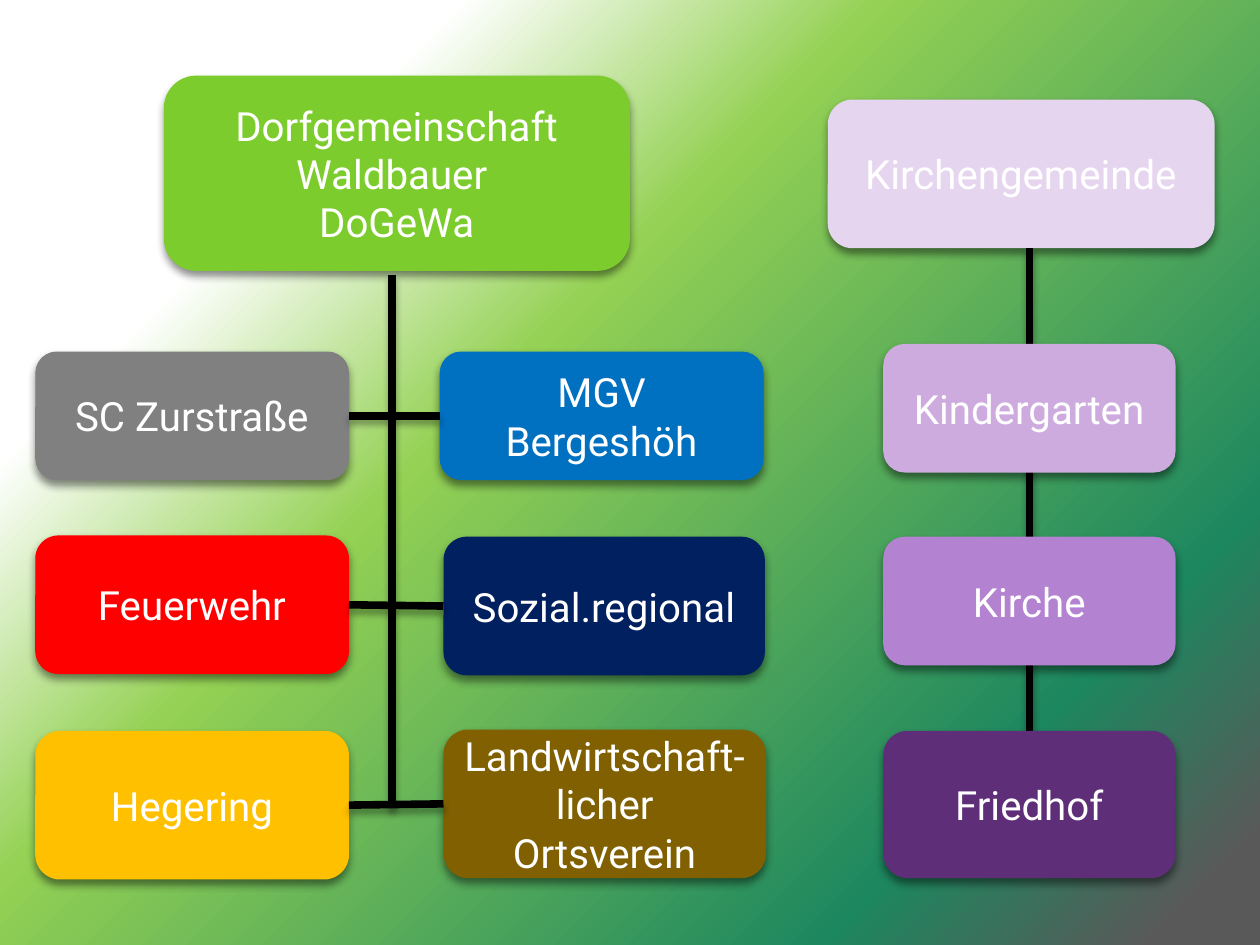
from lxml import etree
from pptx import Presentation
from pptx.dml.color import RGBColor
from pptx.enum.shapes import MSO_CONNECTOR, MSO_SHAPE
from pptx.enum.text import MSO_ANCHOR, PP_ALIGN
from pptx.oxml.ns import qn
from pptx.util import Inches, Pt

ROUNDED = MSO_SHAPE.ROUNDED_RECTANGLE
STRAIGHT = MSO_CONNECTOR.STRAIGHT
MIDDLE = MSO_ANCHOR.MIDDLE
CENTER = PP_ALIGN.CENTER
LEFT_SIDE, RIGHT_SIDE = 1, 3

THEME = {
    "font": "Roboto",
    "size": 23,
    "text": "FFFFFF",
    "line": "000000",
    "line_width": 4.33,
    "box_shadow": {"alpha": 45, "blur": 5, "distance": 3},
    "line_shadow": {"alpha": 35, "blur": 4, "distance": 3},
    "gradient": [(21, "FFFFFF", 0), (40, "94D154", 100),
                 (80, "1D875F", 100), (95, "595959", 100)],
    "gradient_angle": 45,
}

VILLAGE = (["Dorfgemeinschaft", "Waldbauer ", "DoGeWa"], "7DCC2E", (1.3, 0.6, 3.7, 1.55))
PARISH = (["Kirchengemeinde"], "E6D5EF", (6.57, 0.79, 3.07, 1.18))
CLUB_PAIRS = [
    ((["SC Zurstraße"], "808080", (0.28, 2.79, 2.49, 1.02)),
     (["MGV Bergeshöh"], "0070C0", (3.49, 2.79, 2.57, 1.02))),
    ((["Feuerwehr"], "FF0000", (0.28, 4.25, 2.49, 1.1)),
     (["Sozial.regional"], "002060", (3.52, 4.26, 2.55, 1.1))),
    ((["Hegering"], "FFC000", (0.28, 5.8, 2.49, 1.18)),
     (["Landwirtschaft-licher Ortsverein"], "806000", (3.52, 5.79, 2.56, 1.18))),
]
PARISH_UNITS = [
    (["Kindergarten"], "CDABDF", (7.01, 2.73, 2.32, 1.02)),
    (["Kirche"], "B382D0", (7.01, 4.26, 2.32, 1.02)),
    (["Friedhof"], "5E2E79", (7.01, 5.8, 2.32, 1.17)),
]
VILLAGE_TRUNK = (3.11, 2.18, 6.41)
PARISH_TRUNK = (8.17, 1.97, 6.2)


def add_color(parent, color, alpha):
    node = etree.SubElement(parent, qn("a:srgbClr"), val=color)
    if alpha < 100:
        etree.SubElement(node, qn("a:alpha"), val=str(alpha * 1000))


def add_shadow(item, alpha, blur, distance):
    properties = item._element.spPr
    for old in properties.findall(qn("a:effectLst")):
        properties.remove(old)
    effects = etree.SubElement(properties, qn("a:effectLst"))
    shadow = etree.SubElement(effects, qn("a:outerShdw"), blurRad=str(Pt(blur)),
                              dist=str(Pt(distance)), dir="5400000",
                              algn="ctr", rotWithShape="0")
    add_color(shadow, "000000", alpha)


def set_background(slide):
    fill = slide.background.fill
    fill.gradient()
    fill.gradient_angle = 0
    gradient = slide._element.cSld.find(".//" + qn("a:gradFill"))
    stops = gradient.find(qn("a:gsLst"))
    for old in list(stops):
        stops.remove(old)
    for position, color, alpha in THEME["gradient"]:
        stop = etree.SubElement(stops, qn("a:gs"), pos=str(position * 1000))
        add_color(stop, color, alpha)
    direction = gradient.find(qn("a:lin"))
    direction.set("ang", str(THEME["gradient_angle"] * 60000))
    direction.set("scaled", "0")


def add_box(slide, lines, color, bounds):
    box = slide.shapes.add_shape(ROUNDED, *map(Inches, bounds))
    box.fill.solid()
    box.fill.fore_color.rgb = RGBColor.from_string(color)
    box.line.fill.background()
    add_shadow(box, **THEME["box_shadow"])
    frame = box.text_frame
    frame.word_wrap = True
    frame.vertical_anchor = MIDDLE
    frame.text = "\n".join(lines)
    for paragraph in frame.paragraphs:
        paragraph.alignment = CENTER
        paragraph.font.name = THEME["font"]
        paragraph.font.size = Pt(THEME["size"])
        paragraph.font.color.rgb = RGBColor.from_string(THEME["text"])
    return box


def add_line(slide, x1, y1, x2, y2):
    line = slide.shapes.add_connector(STRAIGHT, *map(Inches, (x1, y1, x2, y2)))
    line.line.color.rgb = RGBColor.from_string(THEME["line"])
    line.line.width = Pt(THEME["line_width"])
    add_shadow(line, **THEME["line_shadow"])
    return line


def main():
    deck = Presentation()
    deck.slide_width, deck.slide_height = Inches(10), Inches(7.5)
    slide = deck.slides.add_slide(deck.slide_layouts[6])
    set_background(slide)

    add_box(slide, *VILLAGE)
    add_box(slide, *PARISH)
    club_boxes = [[add_box(slide, *club) for club in pair] for pair in CLUB_PAIRS]

    for x, top, bottom in (VILLAGE_TRUNK, PARISH_TRUNK):
        add_line(slide, x, top, x, bottom)
    for left_club, right_club in club_boxes:
        rung = add_line(slide, 0, 0, 1, 1)
        rung.begin_connect(left_club, RIGHT_SIDE)
        rung.end_connect(right_club, LEFT_SIDE)

    for unit in PARISH_UNITS:
        add_box(slide, *unit)
    deck.save("out.pptx")


if __name__ == "__main__":
    main()
